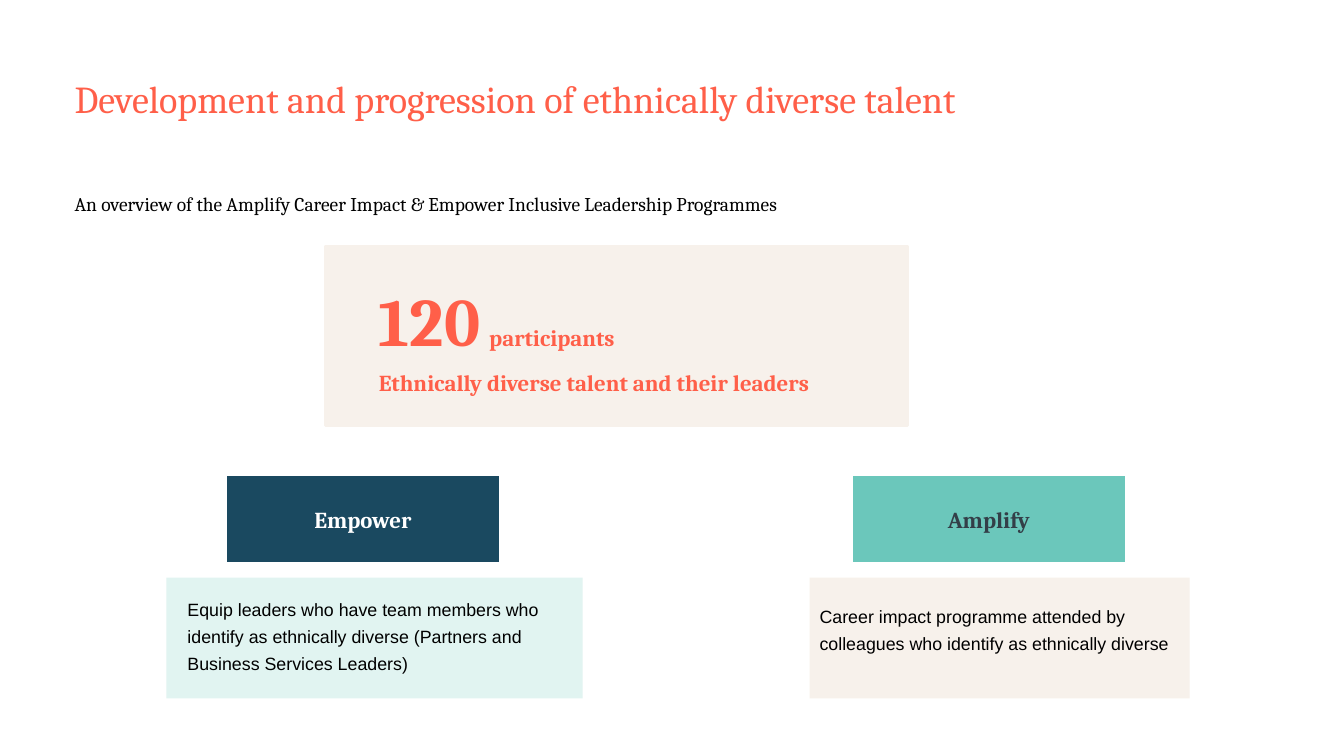
"""Build a slide on the Empower and Amplify talent programmes."""
from pptx import Presentation, util as u
from pptx.dml.color import RGBColor
from pptx.enum import shapes, text

CORAL = RGBColor(0xFF, 0x5F, 0x49)
BLACK = RGBColor(0x00, 0x00, 0x00)
WHITE = RGBColor(0xFF, 0xFF, 0xFF)
SLATE = RGBColor(0x33, 0x3F, 0x48)
NAVY = RGBColor(0x1A, 0x49, 0x60)
TEAL = RGBColor(0x6B, 0xC7, 0xBB)
MINT = RGBColor(0xE1, 0xF4, 0xF1)
SAND = RGBColor(0xF7, 0xF1, 0xEB)

deck = Presentation()
deck.slide_width, deck.slide_height = u.Inches(13.33), u.Inches(7.5)
COLUMN, ROW = deck.slide_width / 100, deck.slide_height / 100
slide = deck.slides.add_slide(deck.slide_layouts[6])

HEADING = {"name": "Cambria", "size": u.Pt(27.2), "color": CORAL}
SUBHEADING = {"name": "Cambria", "size": u.Pt(13.9), "color": BLACK}
BODY = {"name": "Arial", "size": u.Pt(12.7), "color": BLACK}
LABEL = {"name": "Cambria", "size": u.Pt(16.3), "bold": True, "color": CORAL}
FIGURE = LABEL | {"size": u.Pt(48.4)}
GAP = LABEL | {"size": u.Pt(29)}


def add_box(area, fill=None, outline=None, inset=0.0):
    """Place a rectangle, or a text box if there is no fill, on the grid."""
    left, top, width, height = area
    place = [round(v) for v in (left * COLUMN, top * ROW, width * COLUMN, height * ROW)]
    if fill is None:
        box = slide.shapes.add_textbox(*place)
    else:
        box = slide.shapes.add_shape(shapes.MSO_SHAPE.RECTANGLE, *place)
        box.shadow.inherit = False
        box.fill.solid()
        box.fill.fore_color.rgb = fill
        if outline is None:
            box.line.fill.background()
        else:
            box.line.color.rgb = outline
            box.line.width = u.Pt(2)
    frame = box.text_frame
    frame.word_wrap = True
    frame.margin_left = frame.margin_right = u.Inches(inset)
    frame.margin_top = frame.margin_bottom = u.Inches(inset / 2)
    return frame


def write(para, spans, **layout):
    """Fill a paragraph with formatted spans."""
    for name, value in layout.items():
        setattr(para, name, value)
    for words, style in spans:
        span = para.add_run()
        span.text = words
        for name, value in style.items():
            if name == "color":
                span.font.color.rgb = value
            else:
                setattr(span.font, name, value)


headings = [
    ((5.55, 10, 87.9, 6.13), "Development and progression of ethnically diverse talent", HEADING),
    ((5.55, 25.47, 89, 4.13),
     "An overview of the Amplify Career Impact & Empower Inclusive Leadership Programmes", SUBHEADING),
]
for area, words, style in headings:
    write(add_box(area).paragraphs[0], [(words, style)])

add_box((24.23, 32.53, 43.28, 23.73), SAND, SAND)
stat = add_box((27.45, 36.27, 43.28, 17.07), inset=0.1)
write(stat.paragraphs[0], [("120", FIGURE), (" ", GAP), ("participants", LABEL)], space_after=u.Pt(6.2))
write(stat.add_paragraph(), [("Ethnically diverse talent and their leaders", LABEL)], space_after=u.Pt(6.2))

programmes = [
    ("Empower", 16.8, NAVY, WHITE, (12.38, 30.98), MINT, (13.95, 78.53, 28.42, 13.6),
     "Equip leaders who have team members who identify as ethnically diverse "
     "(Partners and Business Services Leaders)"),
    ("Amplify", 63.38, TEAL, SLATE, (60.23, 28.28), SAND, (60.98, 79.47, 27.45, 12.13),
     "Career impact programme attended by colleagues who identify as ethnically diverse"),
]
for name, left, fill, ink, (panel_left, panel_width), panel_fill, area, summary in programmes:
    add_box((panel_left, 76.4, panel_width, 16), panel_fill)
    write(add_box(area).paragraphs[0], [(summary, BODY)], line_spacing=1.25)
    badge = add_box((left, 62.8, 20.4, 11.73), fill, WHITE, inset=0.1)
    badge.vertical_anchor = text.MSO_ANCHOR.MIDDLE
    write(badge.paragraphs[0], [(name, LABEL | {"color": ink})], alignment=text.PP_ALIGN.CENTER)

deck.save("out.pptx")
